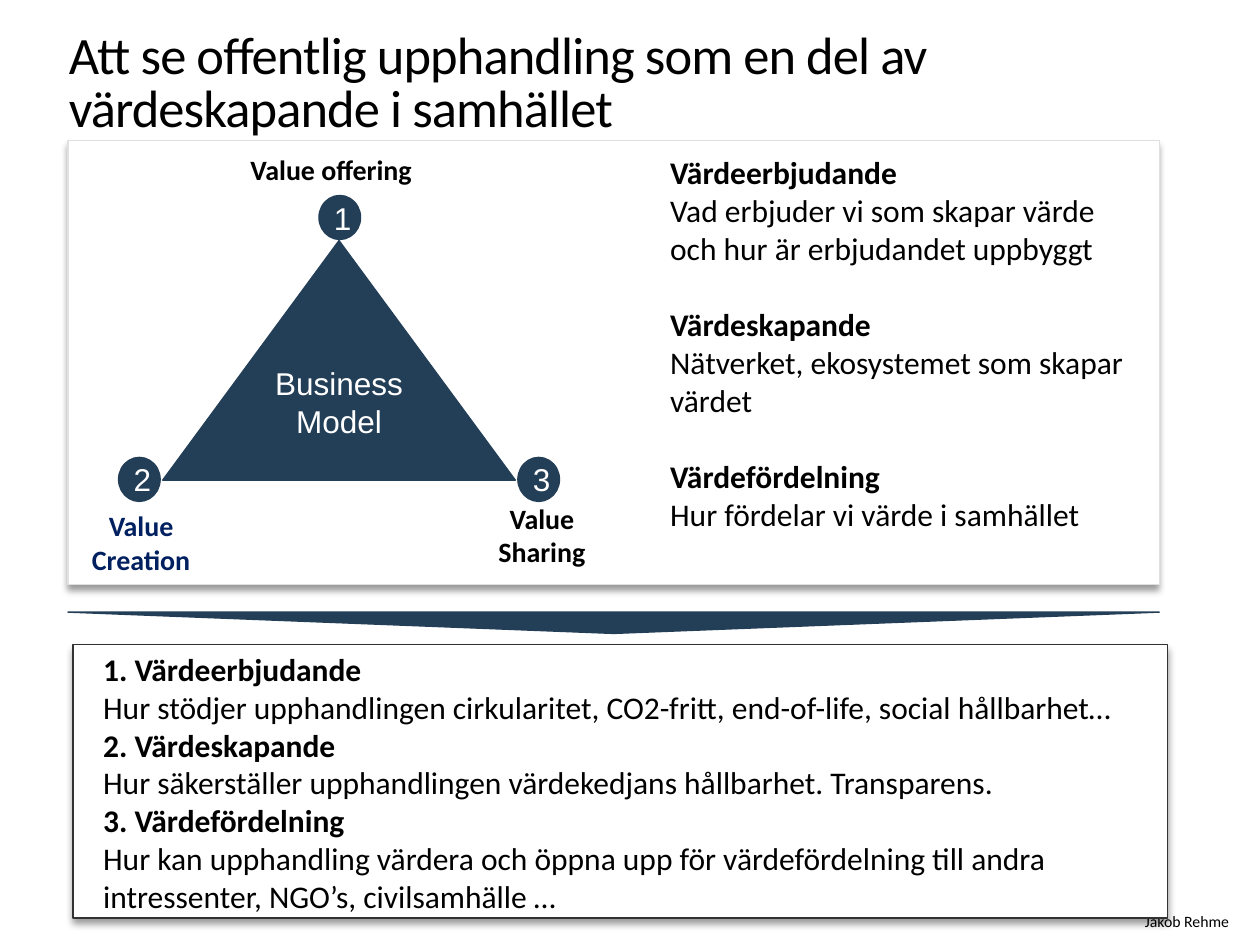
from lxml import etree
from pptx import Presentation
from pptx import util as u
from pptx.dml.color import RGBColor
from pptx.enum import shapes, text
from pptx.oxml import ns

NAVY = RGBColor(0x23, 0x3E, 0x57)
LABEL_BLUE = RGBColor(0x00, 0x20, 0x60)
BLACK = RGBColor(0x00, 0x00, 0x00)
WHITE = RGBColor(0xFF, 0xFF, 0xFF)
DARK_GREY = RGBColor(0x32, 0x32, 0x32)
LIGHT_GREY = RGBColor(0xE0, 0xE0, 0xE0)

CENTER = text.PP_ALIGN.CENTER
LEFT = text.PP_ALIGN.LEFT

CONCEPTS = [
    ("Värdeerbjudande", "Vad erbjuder vi som skapar värde och hur är erbjudandet uppbyggt"),
    ("Värdeskapande", "Nätverket, ekosystemet som skapar värdet"),
    ("Värdefördelning", "Hur fördelar vi värde i samhället"),
]
QUESTIONS = [
    ("1. Värdeerbjudande",
     "Hur stödjer upphandlingen cirkularitet, CO2-fritt, end-of-life, social hållbarhet…"),
    ("2. Värdeskapande",
     "Hur säkerställer upphandlingen värdekedjans hållbarhet. Transparens."),
    ("3. Värdefördelning",
     "Hur kan upphandling värdera och öppna upp för värdefördelning till andra "
     "intressenter, NGO’s, civilsamhälle …"),
]
CORNERS = [
    ("1", (6.43, 3.94), "Value offering", (4.8, 2.95, 4.14, 0.94), BLACK, LEFT),
    ("2", (2.39, 9.22), "Value Creation", (1.27, 10.13, 3.15, 1.63), LABEL_BLUE, CENTER),
    ("3", (10.44, 9.22), "Value Sharing", (9.35, 9.98, 3.15, 1.63), BLACK, CENTER),
]


def write(paragraph, wording, size=18, font="Calibri", color=BLACK, bold=False,
          align=LEFT, before=0, line=None, tracking=None):
    """Write one formatted run into a paragraph."""
    paragraph.alignment = align
    if before:
        paragraph.space_before = u.Pt(before)
    if line:
        paragraph.line_spacing = line
    run = paragraph.add_run()
    run.text = wording
    run.font.size = u.Pt(size)
    run.font.name = font
    run.font.bold = bold
    run.font.color.rgb = color
    if tracking:
        run.font._element.set("spc", str(int(tracking * 100)))


def add_label(slide, place, wording, wrap=True, **style):
    """Add a text box holding one paragraph."""
    frame = slide.shapes.add_textbox(*map(u.Cm, place)).text_frame
    frame.word_wrap = wrap
    write(frame.paragraphs[0], wording, **style)


def add_entries(slide, place, entries, gap=0):
    """Add a text box of bold headings, each followed by its explanation."""
    frame = slide.shapes.add_textbox(*map(u.Cm, place)).text_frame
    frame.word_wrap = True
    for index, (heading, explanation) in enumerate(entries):
        first = frame.add_paragraph() if index else frame.paragraphs[0]
        write(first, heading, bold=True, before=gap if index else 0)
        write(frame.add_paragraph(), explanation)


def add_block(slide, kind, place, fill=NAVY, border=NAVY):
    """Add a filled preset shape with a thin border and no shadow."""
    block = slide.shapes.add_shape(kind, *map(u.Cm, place))
    block.fill.solid()
    block.fill.fore_color.rgb = fill
    block.line.color.rgb = border
    block.line.width = u.Pt(0.75)
    block.shadow.inherit = False
    return block


def add_panel(slide, place, border):
    """Add a white rectangle with a soft shadow below it."""
    panel = add_block(slide, shapes.MSO_SHAPE.RECTANGLE, place, WHITE, border)
    effects = panel._element.spPr.find(ns.qn("a:effectLst"))
    shadow = etree.SubElement(effects, ns.qn("a:outerShdw"), blurRad=str(u.Pt(4)),
                              dist=str(u.Pt(3)), dir="5400000", rotWithShape="0")
    tint = etree.SubElement(shadow, ns.qn("a:srgbClr"), val=str(BLACK))
    etree.SubElement(tint, ns.qn("a:alpha"), val="40000")


def add_caption(block, wording, bottom=0.1):
    """Write centred white text inside a block."""
    frame = block.text_frame
    frame.word_wrap = True
    frame.vertical_anchor = text.MSO_ANCHOR.MIDDLE
    frame.margin_left = frame.margin_right = u.Cm(0.18)
    frame.margin_top, frame.margin_bottom = u.Cm(0.1), u.Cm(bottom)
    write(frame.paragraphs[0], wording, font="Arial", color=WHITE, align=CENTER)


def add_business_model(slide):
    """Add the triangle with its numbered and labelled corners."""
    triangle = add_block(slide, shapes.MSO_SHAPE.ISOSCELES_TRIANGLE, (3.28, 4.85, 7.11, 4.83))
    add_caption(triangle, "Business Model", bottom=0.83)
    for number, corner, name, place, color, align in CORNERS:
        add_label(slide, place, name, size=16, bold=True, color=color, align=align)
        add_caption(add_block(slide, shapes.MSO_SHAPE.OVAL, (*corner, 0.84, 0.89)), number)


def main():
    """Build the slide and save it."""
    deck = Presentation()
    deck.slide_width, deck.slide_height = u.Cm(25.4), u.Cm(19.05)
    slide = deck.slides.add_slide(deck.slide_layouts[6])
    add_label(slide, (22.83, 18.26, 2.46, 0.64), "Jakob Rehme", wrap=False, size=9)
    add_panel(slide, (1.47, 13, 22.07, 5.51), DARK_GREY)
    add_panel(slide, (1.37, 2.84, 22, 8.94), LIGHT_GREY)
    add_label(slide, (1.14, 0.51, 22.07, 1.04),
              "Att se offentlig upphandling som en del av värdeskapande i samhället",
              size=30, line=0.85, tracking=-0.5)
    add_entries(slide, (13.26, 2.97, 9.8, 7.95), CONCEPTS, gap=22)
    add_business_model(slide)
    pointer = add_block(slide, shapes.MSO_SHAPE.ISOSCELES_TRIANGLE, (1.37, 12.34, 22, 0.43))
    pointer.rotation = 180
    add_entries(slide, (1.83, 12.98, 22, 5.64), QUESTIONS)
    deck.save("out.pptx")


if __name__ == "__main__":
    main()
